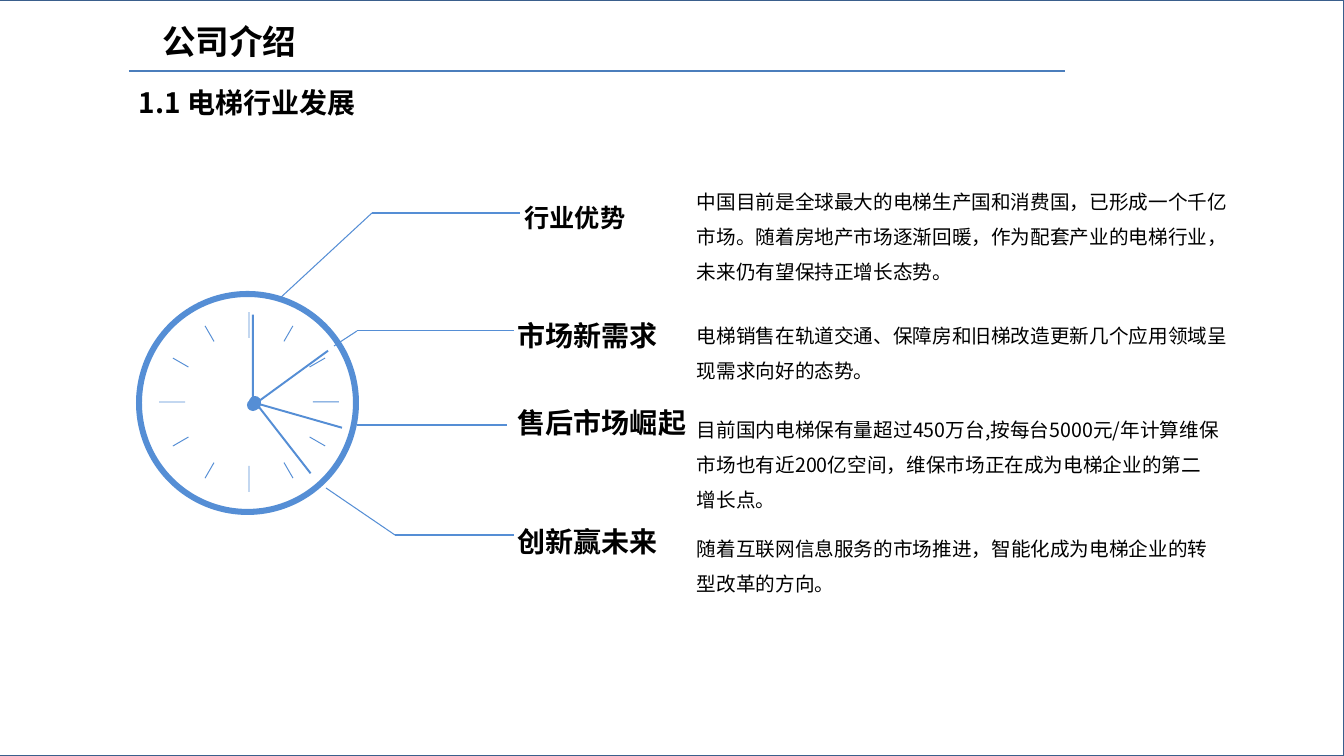
from itertools import pairwise
from math import cos, radians, sin

from pptx import Presentation
from pptx import util as u
from pptx.dml.color import RGBColor
from pptx.enum import shapes, text
from pptx.oxml.ns import qn
from pptx.oxml.xmlchemy import OxmlElement

EMU_PER_PX = 12192000 / 1344
FONT = "Noto Sans CJK SC"
BLUE = "558ED5"
RECT, OVAL = shapes.MSO_SHAPE.RECTANGLE, shapes.MSO_SHAPE.OVAL


def px(*lengths):
    return [u.Emu(round(n * EMU_PER_PX)) for n in lengths]


def paint(part, fill=None, line=None, width=1):
    """Give a shape or connector flat colours and no shadow."""
    if fill:
        part.shadow.inherit = False
        part.fill.solid()
        part.fill.fore_color.rgb = RGBColor.from_string(fill)
    else:
        part._element.spPr.append(OxmlElement("a:effectLst"))
    if line:
        part.line.color.rgb = RGBColor.from_string(line)
        part.line.width = u.Pt(width)
    else:
        part.line.fill.background()


prs = Presentation()
prs.slide_width, prs.slide_height = px(1344, 756)
slide = prs.slides.add_slide(prs.slide_layouts[5])

# Frame and header rule
frame = slide.shapes.add_shape(RECT, *px(-2, 0, 1346, 756))
paint(frame, "FFFFFF", "3A5F8C", 2)
alpha = OxmlElement("a:alpha")
alpha.set("val", "70000")
frame._element.spPr.find(qn("a:solidFill"))[0].append(alpha)
slide.shapes._spTree.insert(2, frame._element)

# Clock dial: ring and twelve ticks, longer at the quarters
dial = slide.shapes.add_group_shape().shapes
ring = dial.add_shape(shapes.MSO_SHAPE.DONUT, *px(136, 291, 223, 224))
ring.adjustments[0] = 0.027
paint(ring, BLUE)
for angle in range(0, 360, 30):
    length, radius = (26, 77) if angle % 90 == 0 else (18, 79)
    x = 249 + radius * cos(radians(angle))
    y = 402 + radius * sin(radians(angle))
    tick = dial.add_shape(RECT, *px(x - length / 2, y - 0.5, length, 1))
    tick.rotation = angle
    paint(tick, BLUE)

# Clock hands: tip, arm and hub turned about the pivot
for angle, pivot_x, pivot_y in [(270, 253, 405), (52.1, 255, 402),
                                (323.9, 255, 404), (15.9, 255, 403)]:
    hand = slide.shapes.add_group_shape().shapes
    for kind, radius, length, thickness in [(RECT, 76, 26, 1), (RECT, 45, 91, 2),
                                            (OVAL, 0, 12, 12)]:
        x = pivot_x + radius * cos(radians(angle))
        y = pivot_y + radius * sin(radians(angle))
        piece = hand.add_shape(
            kind, *px(x - length / 2, y - thickness / 2, length, thickness))
        piece.rotation = angle
        paint(piece, BLUE)

# Header rule and the leaders from the clock to the topics
for points, colour, width in [
    ([(129, 71), (1065, 71)], "4B7EBC", 2),
    ([(278, 300), (372, 213), (520, 213)], BLUE, 0.75),
    ([(334, 346), (357, 331), (514, 331)], BLUE, 0.75),
    ([(357, 425), (507, 425)], BLUE, 0.75),
    ([(326, 488), (395, 535), (514, 535)], BLUE, 0.75),
]:
    for start, end in pairwise(points):
        leader = slide.shapes.add_connector(
            shapes.MSO_CONNECTOR.STRAIGHT, *px(*start, *end))
        paint(leader, line=colour, width=width)

# Headings, topic labels and descriptions
title = slide.shapes.title
title.left, title.top, title.width, title.height = px(152, 16, 559, 50)
title.text_frame.auto_size = text.MSO_AUTO_SIZE.NONE
title.text_frame.vertical_anchor = text.MSO_ANCHOR.MIDDLE

LEFT, CENTER = text.PP_ALIGN.LEFT, text.PP_ALIGN.CENTER
styled = [(title.text_frame, "公司介绍", 24, True, LEFT, 1)]
boxes = [((129, 87, 536, 37), "1.1 电梯行业发展", 20, True, LEFT, 0.8)]
for label, size, label_box, description, description_box in [
    ("行业优势", 18, (514, 197, 122, 40),
     "中国目前是全球最大的电梯生产国和消费国，已形成一个千亿市场。"
     "随着房地产市场逐渐回暖，作为配套产业的电梯行业，未来仍有望保持正增长态势。",
     (687, 173, 559, 113)),
    ("市场新需求", 20, (507, 314, 161, 44),
     "电梯销售在轨道交通、保障房和旧梯改造更新几个应用领域呈现需求向好的态势。",
     (687, 307, 551, 78)),
    ("售后市场崛起", 20, (507, 401, 190, 44),
     "目前国内电梯保有量超过450万台,按每台5000元/年计算维保市场也有近200亿空间，"
     "维保市场正在成为电梯企业的第二增长点。",
     (687, 401, 543, 113)),
    ("创新赢未来", 20, (507, 520, 161, 44),
     "随着互联网信息服务的市场推进，智能化成为电梯企业的转型改革的方向。",
     (687, 520, 535, 78)),
]:
    boxes.append((label_box, label, size, True, CENTER, 1))
    boxes.append((description_box, description, 14, False, LEFT, 1.5))

for box, *style in boxes:
    text_frame = slide.shapes.add_textbox(*px(*box)).text_frame
    text_frame.word_wrap = style[3] == LEFT
    text_frame.auto_size = text.MSO_AUTO_SIZE.SHAPE_TO_FIT_TEXT
    styled.append((text_frame, *style))

for text_frame, wording, size, bold, align, spacing in styled:
    text_frame.text = wording
    paragraph = text_frame.paragraphs[0]
    paragraph.alignment = align
    paragraph.line_spacing = spacing
    font = paragraph.font
    font.size, font.bold, font.name = u.Pt(size), bold, FONT
    font.color.rgb = RGBColor.from_string("000000")
    east_asian = OxmlElement("a:ea")
    east_asian.set("typeface", FONT)
    paragraph._p.pPr.find(qn("a:defRPr")).append(east_asian)

prs.save("out.pptx")
